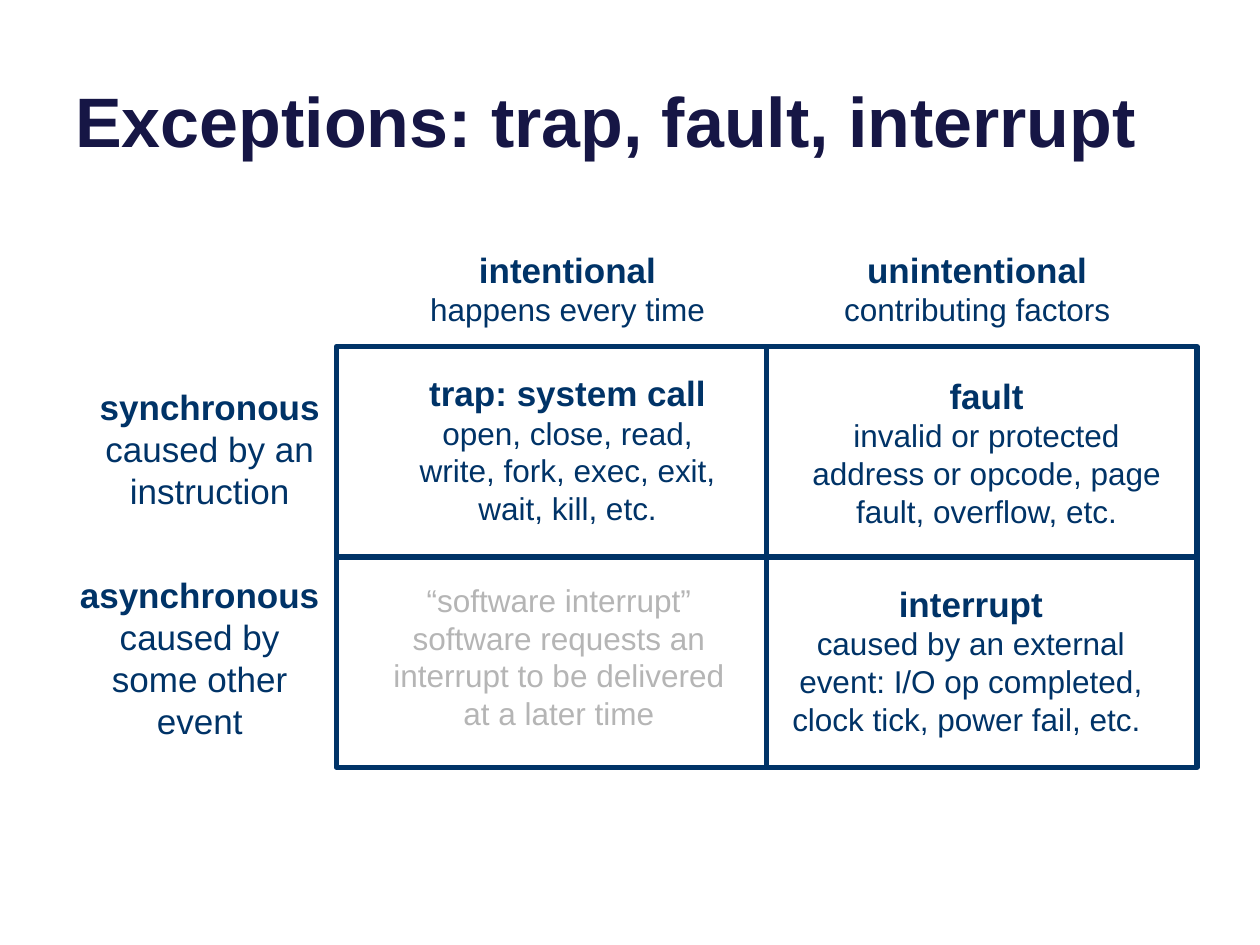
from dataclasses import dataclass

from pptx import Presentation
from pptx.dml.color import RGBColor
from pptx.enum.shapes import MSO_SHAPE
from pptx.enum.text import MSO_ANCHOR, MSO_AUTO_SIZE, PP_ALIGN
from pptx.util import Inches, Pt

RECTANGLE = MSO_SHAPE.RECTANGLE
LEFT, CENTER = PP_ALIGN.LEFT, PP_ALIGN.CENTER
TOP, BOTTOM = MSO_ANCHOR.TOP, MSO_ANCHOR.BOTTOM
GROW, FIXED = MSO_AUTO_SIZE.SHAPE_TO_FIT_TEXT, MSO_AUTO_SIZE.NONE

NAVY = RGBColor(0x00, 0x33, 0x67)
GRAY = RGBColor(0xB5, 0xB5, 0xB5)
INDIGO = RGBColor(0x16, 0x16, 0x45)

GRID_LEFT, GRID_TOP = 2.67, 2.75
CELL_WIDTH, CELL_HEIGHT = 3.415, 1.67


@dataclass
class Label:
    left: float
    top: float
    width: float
    height: float
    heading: str
    detail: str
    detail_size: int = 18
    detail_color: RGBColor = NAVY


LABELS = [
    # Row labels
    Label(0.5, 3.01, 2.33, 1.11, "synchronous", "caused by an instruction", 20),
    Label(0.5, 4.5, 2.17, 1.45, "asynchronous", "caused by some other event", 20),
    # Column labels
    Label(3.17, 1.92, 2.67, 0.74, "intentional", "happens every time"),
    Label(6.42, 1.92, 2.67, 0.74, "unintentional", "contributing factors"),
    # Cell contents
    Label(3.17, 2.9, 2.67, 1.35, "trap: system call",
          "open, close, read, write, fork, exec, exit, wait, kill, etc."),
    Label(6.33, 2.92, 3, 1.35, "fault",
          "invalid or protected address or opcode, page fault, overflow, etc."),
    Label(6.08, 4.57, 3.25, 1.35, "interrupt",
          "caused by an external event: I/O op completed, "
          "clock tick, power fail, etc. "),
    Label(2.96, 4.56, 2.95, 1.72, "",
          "“software interrupt” software requests an interrupt "
          "to be delivered at a later time", detail_color=GRAY),
]


def add_cell(page, row: int, column: int) -> None:
    cell = page.shapes.add_shape(
        RECTANGLE,
        Inches(GRID_LEFT + column * CELL_WIDTH),
        Inches(GRID_TOP + row * CELL_HEIGHT),
        Inches(CELL_WIDTH), Inches(CELL_HEIGHT))
    cell.shadow.inherit = False
    cell.fill.background()
    cell.line.color.rgb = NAVY
    cell.line.width = Pt(3)


def add_text_box(page, left: float, top: float, width: float, height: float,
                 anchor: MSO_ANCHOR, auto_size: MSO_AUTO_SIZE):
    box = page.shapes.add_textbox(
        Inches(left), Inches(top), Inches(width), Inches(height))
    frame = box.text_frame
    frame_format = {"word_wrap": True, "auto_size": auto_size,
                    "vertical_anchor": anchor}
    for name, value in frame_format.items():
        setattr(frame, name, value)
    return frame


def write_para(para, text: str, size: int, color: RGBColor, bold: bool,
               alignment: PP_ALIGN = CENTER) -> None:
    para.alignment = alignment
    span = para.add_run()
    span.text = text
    font_format = {"name": "Arial", "size": Pt(size), "bold": bold}
    for name, value in font_format.items():
        setattr(span.font, name, value)
    span.font.color.rgb = color


def add_label(page, label: Label) -> None:
    frame = add_text_box(page, label.left, label.top, label.width,
                         label.height, TOP, GROW)
    para = frame.paragraphs[0]
    if label.heading:
        write_para(para, label.heading, 20, NAVY, True)
        para = frame.add_paragraph()
    write_para(para, label.detail, label.detail_size, label.detail_color, False)


def main() -> None:
    deck = Presentation()
    deck.slide_width, deck.slide_height = Inches(10), Inches(7.5)
    page = deck.slides.add_slide(deck.slide_layouts[6])

    # Two-by-two grid
    for row in range(2):
        for column in range(2):
            add_cell(page, row, column)

    for label in LABELS:
        add_label(page, label)

    # Title
    title = add_text_box(page, 0.5, -0.37, 9, 1.7, BOTTOM, FIXED)
    write_para(title.paragraphs[0], "Exceptions: trap, fault, interrupt",
               40, INDIGO, True, LEFT)

    deck.save("out.pptx")


if __name__ == "__main__":
    main()
